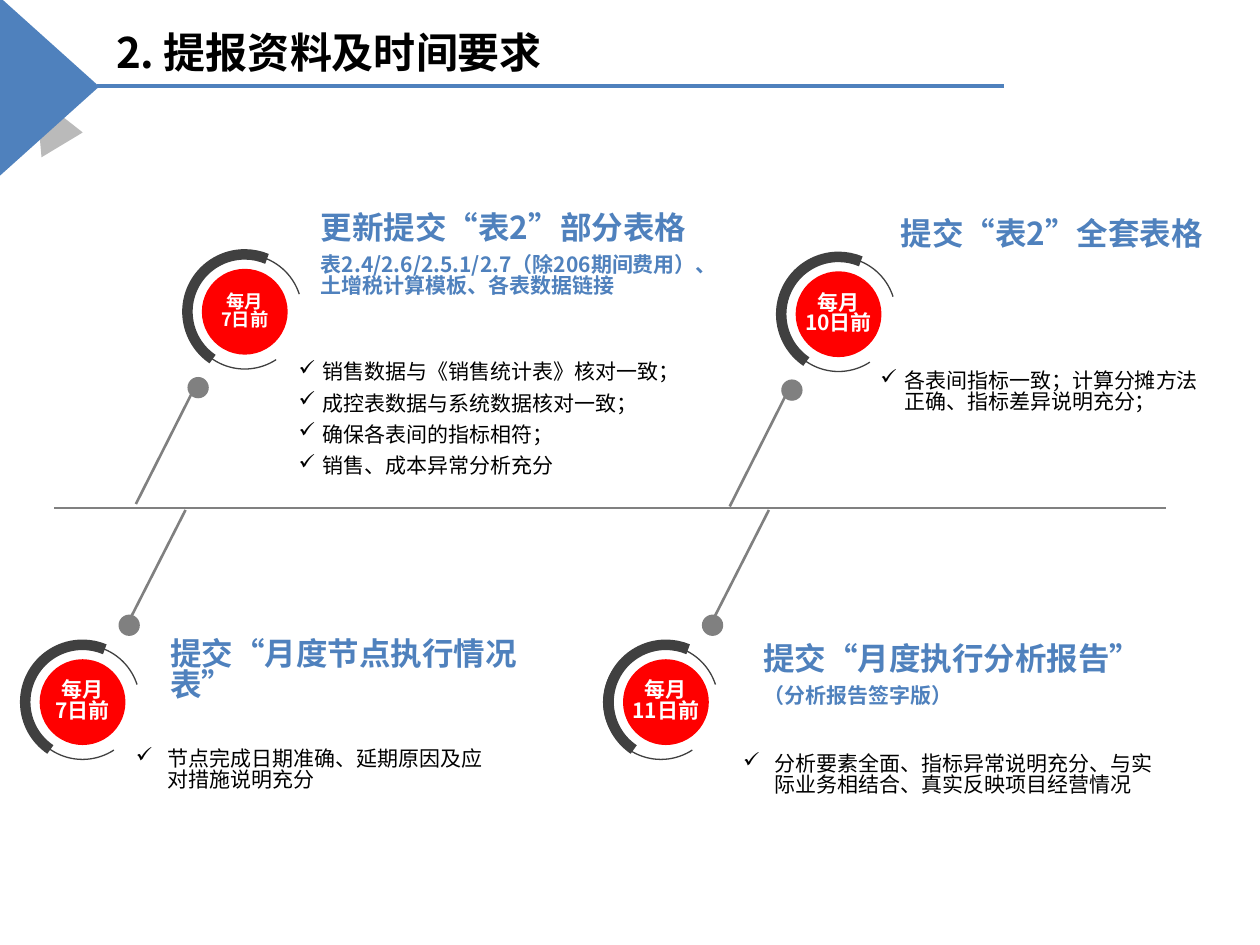
from lxml import etree
from pptx import Presentation
from pptx.dml.color import RGBColor
from pptx.enum import shapes, text
from pptx.oxml import ns
from pptx.util import Cm, Pt

FONT = "Noto Sans CJK SC"
BLUE = RGBColor(0x4F, 0x81, 0xBD)
RED = RGBColor(0xFF, 0x00, 0x00)
GREY = RGBColor(0x80, 0x80, 0x80)
DARK = RGBColor(0x40, 0x40, 0x40)
BLACK = RGBColor(0x00, 0x00, 0x00)
WHITE = RGBColor(0xFF, 0xFF, 0xFF)

RING, DISC, KNOB = 2.31, 1.73, 0.43
# Offsets from the ring's top left corner: knob, stem start, stem end
ABOVE = ((0, 2.47), (-1.04, 5.03), (0.1, 2.77))
BELOW = ((1.88, -0.61), (3.23, -2.72), (2.08, -0.46))
THIN_ARC, THICK_ARC = (34.064, 205.289), (74.488, 175.713)


def add_xml(parent, tag, **attributes):
    return etree.SubElement(parent, ns.qn(tag), attributes)


def write(frame, lines, sizes, color=BLACK, bold=False, align=None,
          before=0, tick=None):
    """Fill a frame; tick is the (left margin, hanging indent) of ticked lines."""
    for i, line in enumerate(lines):
        paragraph = frame.paragraphs[0] if i == 0 else frame.add_paragraph()
        paragraph.alignment = align
        paragraph.line_spacing = 0.82
        paragraph.space_before = Pt(before if i else 0)
        if tick:
            props = paragraph._p.get_or_add_pPr()
            props.set("marL", str(Cm(tick[0])))
            props.set("indent", str(-Cm(tick[1])))
            add_xml(props, "a:buChar", char="✓")
        run = paragraph.add_run()
        run.text = line
        font = run.font
        font.name, font.size, font.bold = FONT, Pt(sizes[min(i, len(sizes) - 1)]), bold
        font.color.rgb = color
        add_xml(run._r.get_or_add_rPr(), "a:ea", typeface=FONT)


def add_text(slide, box, lines, sizes, inset=(0.25, 0.13), **style):
    frame = slide.shapes.add_textbox(*map(Cm, box)).text_frame
    frame.word_wrap = True
    frame.margin_left = frame.margin_right = Cm(inset[0])
    # Lowers the first line, which the tight line spacing lifts
    frame.margin_top = Cm(inset[1]) + Pt(0.13 * sizes[0])
    frame.margin_bottom = Cm(inset[1])
    write(frame, lines, sizes, **style)


def add_line(parent, start, end, color, width):
    line = parent.shapes.add_connector(
        shapes.MSO_CONNECTOR.STRAIGHT, *map(Cm, (*start, *end)))
    line.line.color.rgb = color
    line.line.width = Pt(width)
    add_xml(line._element.spPr, "a:effectLst")


def add_filled(parent, kind, box, color):
    shape = parent.shapes.add_shape(kind, *map(Cm, box))
    shape.shadow.inherit = False
    shape.fill.solid()
    shape.fill.fore_color.rgb = color
    shape.line.fill.background()
    return shape


def add_arc(parent, left, top, angles, width):
    arc = parent.shapes.add_shape(
        shapes.MSO_SHAPE.ARC, *map(Cm, (left, top, RING, RING)))
    arc.adjustments[0], arc.adjustments[1] = angles
    arc.shadow.inherit = False
    arc.fill.background()
    arc.line.color.rgb = DARK
    arc.line.width = Pt(width)


def add_milestone(slide, left, top, side, deadline, size=12, thin_shift=0):
    """Stem, knob and ringed disc with the deadline."""
    group = slide.shapes.add_group_shape()
    knob, start, end = [(left + x, top + y) for x, y in side]
    oval = shapes.MSO_SHAPE.OVAL
    add_line(group, start, end, GREY, 1.5)
    add_filled(group, oval, (*knob, KNOB, KNOB), GREY)
    gap = (RING - DISC) / 2
    disc = add_filled(group, oval, (left + gap, top + gap, DISC, DISC), RED)
    frame = disc.text_frame
    frame.word_wrap = False
    frame.vertical_anchor = text.MSO_ANCHOR.MIDDLE
    frame.margin_left = frame.margin_right = 0
    frame.margin_top = frame.margin_bottom = 0
    write(frame, ["每月", deadline], [size], color=WHITE, bold=True,
          align=text.PP_ALIGN.CENTER)
    add_arc(group, left + thin_shift, top, THIN_ARC, 0.75)
    add_arc(group, left, top, THICK_ARC, 6)


def add_header(slide):
    triangle = shapes.MSO_SHAPE.ISOSCELES_TRIANGLE
    fold = add_filled(slide, triangle, (0.48, 1.88, 0.97, 1.12), DARK)
    fold.rotation = 329
    fold.adjustments[0] = 0.56
    tint = fold._element.spPr.find(".//" + ns.qn("a:srgbClr"))
    add_xml(tint, "a:alpha", val="36000")
    add_filled(slide, triangle, (-0.81, 0.74, 3.61, 2.01), BLUE).rotation = 90
    add_line(slide, (1.96, 1.73), (20.24, 1.73), BLUE, 2)
    add_text(slide, (2.16, 0.51, 20.12, 1.22), ["2. 提报资料及时间要求"], [24],
             inset=(0.18, 0.1), bold=True)


def main():
    deck = Presentation()
    deck.slide_width, deck.slide_height = Cm(25.4), Cm(19.05)
    slide = deck.slides.add_slide(deck.slide_layouts[6])
    add_header(slide)

    headings = [
        ((6.22, 4.11, 8.38, 2.26),
         ["更新提交“表2”部分表格",
          "表2.4/2.6/2.5.1/2.7（除206期间费用）、土增税计算模板、各表数据链接"]),
        ((3.18, 12.7, 8.33, 1.02), ["提交“月度节点执行情况表”"]),
        ((17.91, 4.24, 7.01, 1.27), ["提交“表2”全套表格"]),
        ((15.14, 12.8, 10.06, 1.75),
         ["提交“月度执行分析报告”", "（分析报告签字版）"]),
    ]
    for box, lines in headings:
        add_text(slide, box, lines, [18, 12], color=BLUE, bold=True, before=6)

    add_line(slide, (1.09, 10.24), (23.5, 10.24), GREY, 1.5)
    add_milestone(slide, 3.78, 5.13, ABOVE, "7日前", size=10.5)
    add_milestone(slide, 0.51, 13, BELOW, "7日前")
    add_milestone(slide, 15.75, 5.18, ABOVE, "10日前")
    add_milestone(slide, 12.27, 13, BELOW, "11日前", thin_shift=-0.1)

    inner, outer = (1.75, 0.48), (0.64, 0.64)
    requirements = [
        ((4.5, 7.14, 9.73, 2.95), inner,
         ["销售数据与《销售统计表》核对一致；", "成控表数据与系统数据核对一致；",
          "确保各表间的指标相符；", "销售、成本异常分析充分"]),
        ((2.49, 14.94, 7.49, 1.27), outer,
         ["节点完成日期准确、延期原因及应对措施说明充分"]),
        ((16.23, 7.32, 8.28, 1.27), inner,
         ["各表间指标一致；计算分摊方法正确、指标差异说明充分；"]),
        ((14.73, 15.04, 8.84, 1.27), outer,
         ["分析要素全面、指标异常说明充分、与实际业务相结合、真实反映项目经营情况"]),
    ]
    for box, tick, lines in requirements:
        add_text(slide, box, lines, [12], before=6, tick=tick)

    deck.save("out.pptx")


if __name__ == "__main__":
    main()
